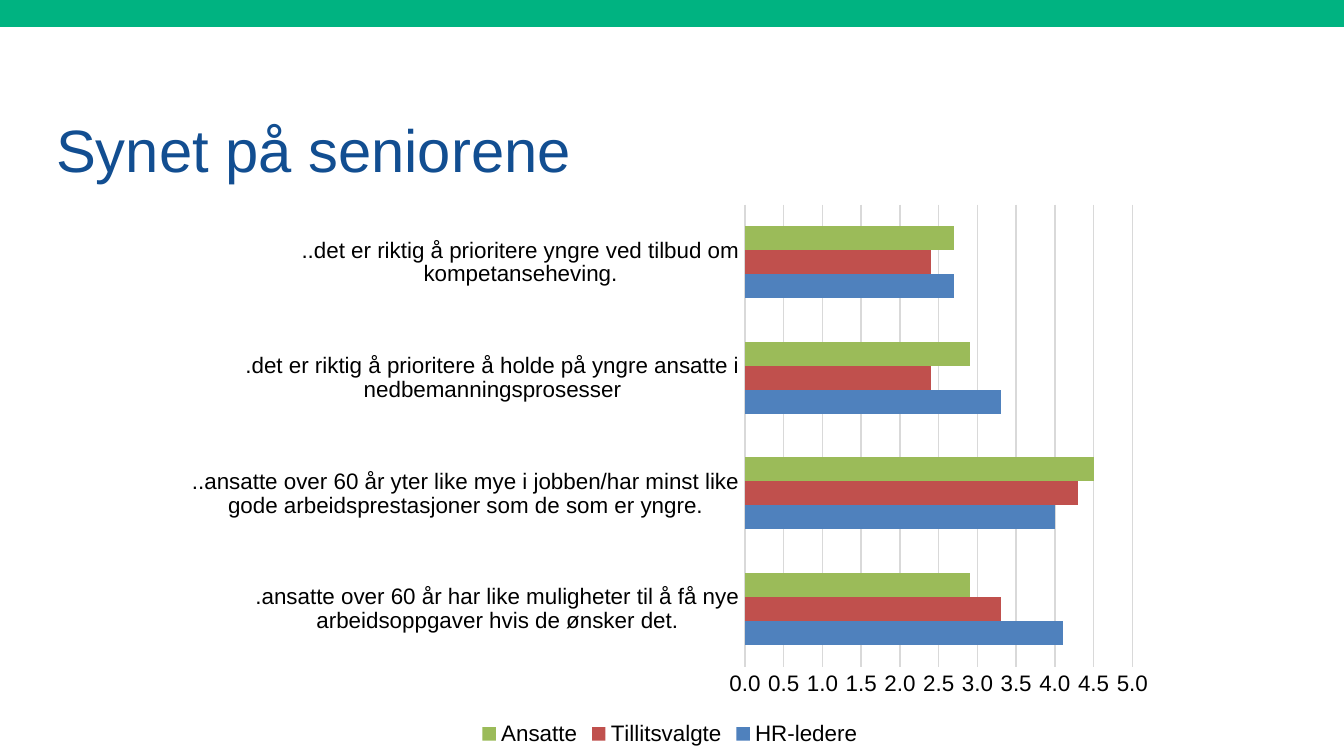
from pptx import Presentation
from pptx.chart.data import CategoryChartData
from pptx.dml.color import RGBColor
from pptx.enum.chart import XL_CHART_TYPE, XL_LEGEND_POSITION, XL_TICK_MARK
from pptx.enum.shapes import MSO_SHAPE
from pptx.enum.text import MSO_ANCHOR
from pptx.util import Inches, Pt

RECT = MSO_SHAPE.RECTANGLE
BOTTOM = MSO_ANCHOR.BOTTOM
BAR = XL_CHART_TYPE.BAR_CLUSTERED
LEGEND_BOTTOM = XL_LEGEND_POSITION.BOTTOM
NO_TICK = XL_TICK_MARK.NONE

COLORS = {
    "band": "00B381",
    "title": "124E91",
    "text": "000000",
    "grid": "D9D9D9",
    "HR-ledere": "4F81BD",
    "Tillitsvalgte": "C0504D",
    "Ansatte": "9BBB59",
}

CATEGORIES = [
    ".ansatte over 60 år har like muligheter til å få nye arbeidsoppgaver hvis de ønsker det.",
    "..ansatte over 60 år yter like mye i jobben/har minst like gode arbeidsprestasjoner som de som er yngre.",
    ".det er riktig å prioritere å holde på yngre ansatte i nedbemanningsprosesser",
    "..det er riktig å prioritere yngre ved tilbud om kompetanseheving.",
]
SERIES = {
    "HR-ledere": [4.1, 4.0, 3.3, 2.7],
    "Tillitsvalgte": [3.3, 4.3, 2.4, 2.4],
    "Ansatte": [2.9, 4.5, 2.9, 2.7],
}


class Deck:
    font = "Arial"

    def __init__(self, prs):
        self.slide = prs.slides.add_slide(prs.slide_layouts[6])

    def color(self, name):
        return RGBColor.from_string(COLORS[name])

    def set_font(self, font, size, color):
        for name, value in {"name": self.font, "size": Pt(size), "bold": False}.items():
            setattr(font, name, value)
        font.color.rgb = self.color(color)

    def set_line(self, line):
        line.color.rgb = self.color("grid")
        line.width = Pt(0.75)

    def band(self, box, color):
        sp = self.slide.shapes.add_shape(RECT, *map(Inches, box))
        sp.shadow.inherit = False
        sp.fill.solid()
        sp.fill.fore_color.rgb = self.color(color)
        sp.line.fill.background()

    def title(self, box, text):
        tf = self.slide.shapes.add_textbox(*map(Inches, box)).text_frame
        for name, value in {"word_wrap": True, "vertical_anchor": BOTTOM}.items():
            setattr(tf, name, value)
        r = tf.paragraphs[0].add_run()
        r.text = text
        self.set_font(r.font, 32, "title")

    def bar_chart(self, box, categories, series):
        data = CategoryChartData(number_format="0.0")
        data.categories = categories
        for name, values in series.items():
            data.add_series(name, values)
        chart = self.slide.shapes.add_chart(BAR, *map(Inches, box), data).chart
        chart.has_title = False
        self.set_font(chart.font, 12, "text")

        plot = chart.plots[0]
        for name, value in {"gap_width": 182, "overlap": 0, "vary_by_categories": False}.items():
            setattr(plot, name, value)
        for s in plot.series:
            s.format.fill.solid()
            s.format.fill.fore_color.rgb = self.color(s.name)

        for axis in (chart.category_axis, chart.value_axis):
            axis.major_tick_mark = axis.minor_tick_mark = NO_TICK
            self.set_font(axis.tick_labels.font, 12, "text")
        self.set_line(chart.category_axis.format.line)

        axis = chart.value_axis
        for name, value in {"minimum_scale": 0, "maximum_scale": 5, "major_unit": 0.5}.items():
            setattr(axis, name, value)
        axis.tick_labels.number_format = "0.0"
        axis.tick_labels.number_format_is_linked = False
        axis.format.line.fill.background()
        self.set_line(axis.major_gridlines.format.line)

        chart.has_legend = True
        chart.legend.position = LEGEND_BOTTOM
        chart.legend.include_in_layout = False
        self.set_font(chart.legend.font, 12, "text")


def main():
    prs = Presentation()
    prs.slide_width = Inches(10)
    prs.slide_height = Inches(10 * 9 / 16)
    deck = Deck(prs)
    deck.band((0, 0, 10, 0.2), "band")
    deck.title((0.32, 0.35, 9.24, 1.07), "Synet på seniorene")
    deck.bar_chart((1.28, 1.44, 7.41, 4.15), CATEGORIES, SERIES)
    prs.save("out.pptx")


if __name__ == "__main__":
    main()
